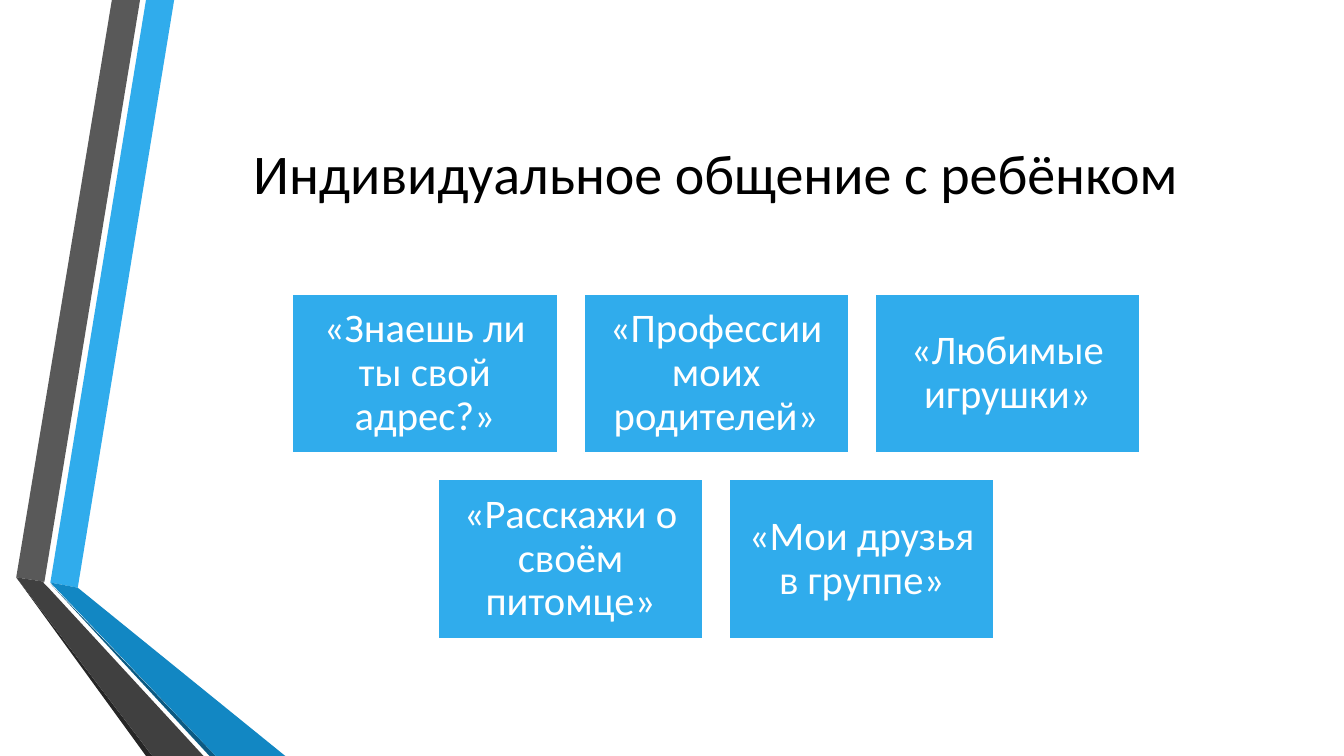
from pptx import Presentation
from pptx.dml.color import RGBColor
from pptx.enum.shapes import MSO_SHAPE
from pptx.enum.text import MSO_ANCHOR, PP_ALIGN
from pptx.util import Cm, Pt

FONT = "Calibri"
BLUE, WHITE, BLACK = "30ACEC", "FFFFFF", "000000"
SLIDE_WIDTH, SLIDE_HEIGHT = 33.87, 19.05
CARD_WIDTH, CARD_HEIGHT, CARD_GAP = 6.68, 4.01, 0.66
CARDS_CENTER, CARDS_TOP, CARD_INSET = 18.05, 7.41, 0.3

RIBBONS = [
    (BLUE, [(1.27, 14.68), (1.96, 14.81), (4.39, 0), (3.68, 0)]),
    ("595959", [(3.53, 0), (2.82, 0), (0.41, 14.55), (1.12, 14.66)]),
    ("262626", [(0.41, 14.55), (3.68, SLIDE_HEIGHT), (3.84, SLIDE_HEIGHT)]),
    ("0C5A82", [(1.27, 14.71), (5.28, SLIDE_HEIGHT), (5.44, SLIDE_HEIGHT)]),
    ("1287C3", [(1.27, 14.68), (5.44, SLIDE_HEIGHT), (7.19, SLIDE_HEIGHT),
                (1.96, 14.81)]),
    ("404040", [(5.13, SLIDE_HEIGHT), (1.22, 14.81), (1.09, 14.68),
                (1.12, 14.66), (0.41, 14.55), (3.84, SLIDE_HEIGHT)]),
]

TOPIC_ROWS = [
    ["«Знаешь ли ты свой адрес?»", "«Профессии моих родителей»",
     "«Любимые игрушки»"],
    ["«Расскажи о своём питомце»", "«Мои друзья в группе»"],
]


def color(hex_value):
    """Turn a hex string into a colour."""
    return RGBColor.from_string(hex_value)


def paint(shape, hex_value):
    """Give a shape a solid fill and no shadow."""
    shape.shadow.inherit = False
    shape.fill.solid()
    shape.fill.fore_color.rgb = color(hex_value)


def write(shape, wording, size, hex_value):
    """Put centred, wrapped text into a shape and return its paragraph."""
    frame = shape.text_frame
    frame.text = wording
    frame.word_wrap = True
    frame.vertical_anchor = MSO_ANCHOR.MIDDLE
    paragraph = frame.paragraphs[0]
    paragraph.alignment = PP_ALIGN.CENTER
    font = paragraph.runs[0].font
    font.name, font.size = FONT, Pt(size)
    font.color.rgb = color(hex_value)
    return paragraph


def add_ribbon(slide, hex_value, corners):
    """Draw one folded piece of the side ribbon."""
    start, *others = [(Cm(x), Cm(y)) for x, y in corners]
    outline = slide.shapes.build_freeform(*start)
    outline.add_line_segments(others, close=True)
    ribbon = outline.convert_to_shape()
    paint(ribbon, hex_value)
    ribbon.line.fill.background()


def add_title(slide, wording):
    """Add the slide heading."""
    title = slide.shapes.add_textbox(Cm(4.11), Cm(1.9), Cm(27.84), Cm(4.88))
    write(title, wording, 40, BLACK)


def add_card(slide, left, top, topic):
    """Add one conversation topic card."""
    card = slide.shapes.add_shape(
        MSO_SHAPE.RECTANGLE, Cm(left), Cm(top), Cm(CARD_WIDTH), Cm(CARD_HEIGHT))
    paint(card, BLUE)
    card.line.color.rgb = color(WHITE)
    card.line.width = Pt(1.25)
    frame = card.text_frame
    frame.margin_left = frame.margin_right = Cm(CARD_INSET)
    frame.margin_top = frame.margin_bottom = Cm(CARD_INSET)
    write(card, topic, 29, WHITE).line_spacing = 0.9


def add_card_row(slide, top, topics):
    """Lay out a centred row of topic cards."""
    step = CARD_WIDTH + CARD_GAP
    first_left = CARDS_CENTER - (len(topics) * step - CARD_GAP) / 2
    for column, topic in enumerate(topics):
        add_card(slide, first_left + column * step, top, topic)


def main():
    """Build and save the slide."""
    presentation = Presentation()
    presentation.slide_width = Cm(SLIDE_WIDTH)
    presentation.slide_height = Cm(SLIDE_HEIGHT)
    slide = presentation.slides.add_slide(presentation.slide_layouts[6])
    for hex_value, corners in RIBBONS:
        add_ribbon(slide, hex_value, corners)
    add_title(slide, "Индивидуальное общение с ребёнком")
    for row, topics in enumerate(TOPIC_ROWS):
        add_card_row(slide, CARDS_TOP + row * (CARD_HEIGHT + CARD_GAP), topics)
    presentation.save("out.pptx")


if __name__ == "__main__":
    main()
